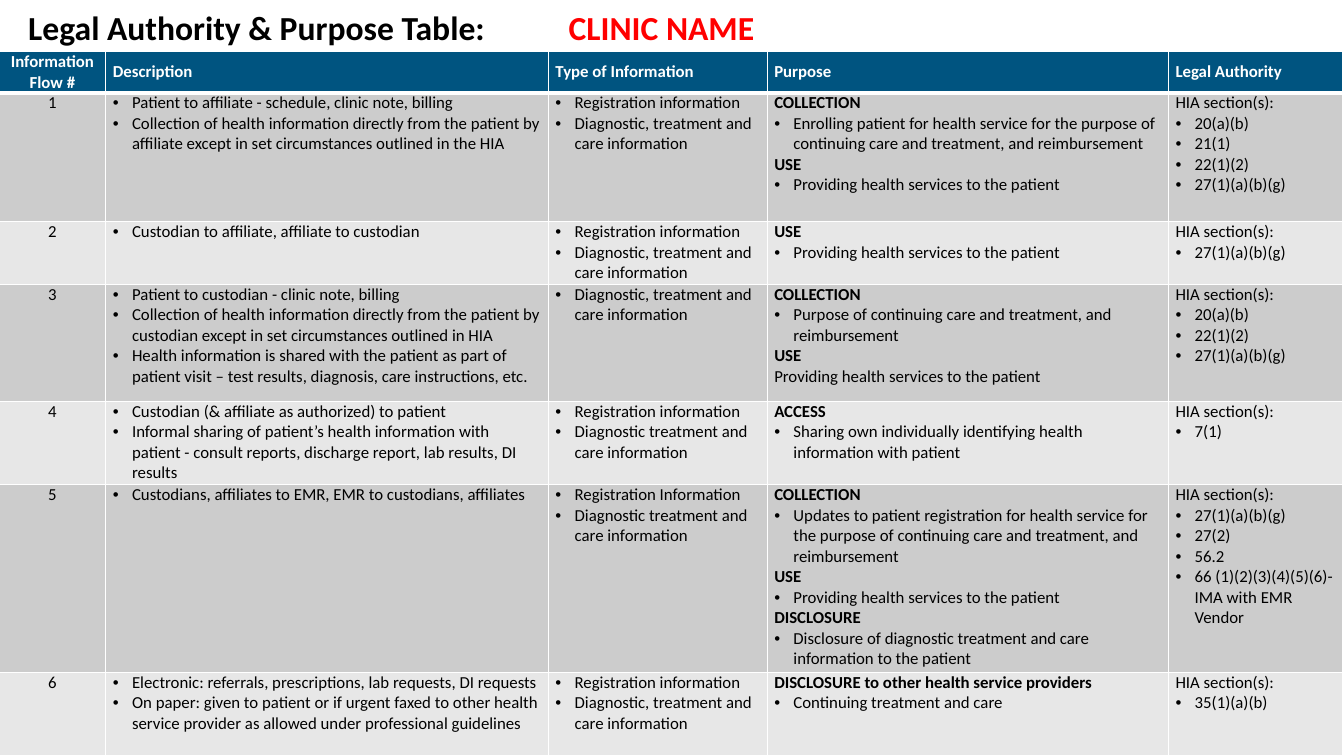
from lxml.etree import SubElement
from pptx import Presentation
from pptx.dml.color import RGBColor
from pptx.enum.text import MSO_ANCHOR, MSO_AUTO_SIZE, PP_ALIGN
from pptx.oxml import parse_xml
from pptx.oxml.ns import nsdecls, qn
from pptx.util import Inches, Pt

BLACK = RGBColor(0x00, 0x00, 0x00)
WHITE = RGBColor(0xFF, 0xFF, 0xFF)
RED = RGBColor(0xFF, 0x00, 0x00)
BLUE = RGBColor(0x00, 0x54, 0x80)
DARK_GREY = RGBColor(0xCC, 0xCC, 0xCC)
LIGHT_GREY = RGBColor(0xE7, 0xE7, 0xE7)

BULLET = "• "
HEADING = "# "
COLUMN_WIDTHS = [1.06, 4.39, 2.17, 3.98, 1.73]
ROW_HEIGHTS = [0.41, 1.28, 0.62, 1.16, 0.83, 1.86, 0.83]
CELL_FORMAT = {
    "margin_left": Inches(0.07),
    "margin_right": Inches(0.07),
    "margin_top": 0,
    "margin_bottom": 0,
}

HEADERS = ["Information Flow #", "Description", "Type of Information", "Purpose", "Legal Authority"]
REGISTRATION = "• Registration information"
DIAGNOSTIC = "• Diagnostic, treatment and care information"
DIAGNOSTIC_TREATMENT = "• Diagnostic treatment and care information"
PROVIDING = "• Providing health services to the patient"
SECTIONS = "HIA section(s):"
FLOWS = [
    (
        ["• Patient to affiliate - schedule, clinic note, billing",
         "• Collection of health information directly from the patient by affiliate "
         "except in set circumstances outlined in the HIA"],
        [REGISTRATION, DIAGNOSTIC],
        ["# COLLECTION",
         "• Enrolling patient for health service for the purpose of continuing care "
         "and treatment, and reimbursement",
         "# USE", PROVIDING],
        [SECTIONS, "• 20(a)(b)", "• 21(1)", "• 22(1)(2)", "• 27(1)(a)(b)(g)"],
    ),
    (
        ["• Custodian to affiliate, affiliate to custodian"],
        [REGISTRATION, DIAGNOSTIC],
        ["# USE", PROVIDING],
        [SECTIONS, "• 27(1)(a)(b)(g)"],
    ),
    (
        ["• Patient to custodian - clinic note, billing",
         "• Collection of health information directly from the patient by custodian "
         "except in set circumstances outlined in HIA",
         "• Health information is shared with the patient as part of patient visit – "
         "test results, diagnosis, care instructions, etc."],
        [DIAGNOSTIC],
        ["# COLLECTION",
         "• Purpose of continuing care and treatment, and reimbursement",
         "# USE", PROVIDING.removeprefix(BULLET)],
        [SECTIONS, "• 20(a)(b)", "• 22(1)(2)", "• 27(1)(a)(b)(g)"],
    ),
    (
        ["• Custodian (& affiliate as authorized) to patient",
         "• Informal sharing of patient’s health information with patient - consult "
         "reports, discharge report, lab results, DI results"],
        [REGISTRATION, DIAGNOSTIC_TREATMENT],
        ["# ACCESS",
         "• Sharing own individually identifying health information with patient"],
        [SECTIONS, "• 7(1)"],
    ),
    (
        ["• Custodians, affiliates to EMR, EMR to custodians, affiliates"],
        ["• Registration Information", DIAGNOSTIC_TREATMENT],
        ["# COLLECTION",
         "• Updates to patient registration for health service for the purpose of "
         "continuing care and treatment, and reimbursement",
         "# USE", PROVIDING,
         "# DISCLOSURE",
         "• Disclosure of diagnostic treatment and care information to the patient"],
        [SECTIONS, "• 27(1)(a)(b)(g)", "• 27(2)", "• 56.2",
         "• 66 (1)(2)(3)(4)(5)(6)- IMA with EMR Vendor"],
    ),
    (
        ["• Electronic: referrals, prescriptions, lab requests, DI requests",
         "• On paper: given to patient or if urgent faxed to other health service "
         "provider as allowed under professional guidelines"],
        [REGISTRATION, DIAGNOSTIC],
        ["# DISCLOSURE to other health service providers", "• Continuing treatment and care"],
        [SECTIONS, "• 35(1)(a)(b)"],
    ),
]


def apply_format(target, values):
    """Set each attribute named in values on target."""
    for name, value in values.items():
        setattr(target, name, value)


def add_run(paragraph, text, size, color, bold):
    """Add a formatted run to a paragraph."""
    run = paragraph.add_run()
    run.text = text
    apply_format(run.font, {"name": "Calibri", "size": Pt(size), "bold": bold})
    run.font.color.rgb = color


def add_bullet(paragraph):
    """Give a paragraph a hanging bullet."""
    properties = paragraph._p.get_or_add_pPr()
    properties.set("marL", str(Inches(0.19)))
    properties.set("indent", str(-Inches(0.19)))
    SubElement(properties, qn("a:buFont"), typeface="Arial")
    SubElement(properties, qn("a:buChar"), char=BULLET.strip())


def set_borders(cell, top, bottom):
    """Draw white borders, with top and bottom widths in points."""
    widths = {"L": 1, "R": 1, "T": top, "B": bottom}
    for index, (side, width) in enumerate(widths.items()):
        border = parse_xml(
            f'<a:ln{side} {nsdecls("a")} w="{Pt(width)}"><a:solidFill>'
            f'<a:srgbClr val="{WHITE}"/></a:solidFill></a:ln{side}>'
        )
        cell._tc.get_or_add_tcPr().insert(index, border)


def fill_cell(cell, lines, fill, color, header=False, centred=False):
    """Write lines into a cell, reading bullet and heading marks."""
    apply_format(cell, CELL_FORMAT)
    cell.vertical_anchor = MSO_ANCHOR.MIDDLE if header else MSO_ANCHOR.TOP
    cell.fill.solid()
    cell.fill.fore_color.rgb = fill
    frame = cell.text_frame
    for index, line in enumerate(lines):
        paragraph = frame.add_paragraph() if index else frame.paragraphs[0]
        paragraph.alignment = PP_ALIGN.CENTER if centred else PP_ALIGN.LEFT
        if line.startswith(BULLET):
            add_bullet(paragraph)
        text = line.removeprefix(BULLET).removeprefix(HEADING)
        add_run(paragraph, text, 12, color, header or line.startswith(HEADING))


def add_title(slide, left, top, width, height):
    """Place the title with the clinic name at a tab stop."""
    title = slide.shapes.title
    apply_format(title, {"left": left, "top": top, "width": width, "height": height})
    apply_format(title.text_frame, {
        "vertical_anchor": MSO_ANCHOR.MIDDLE,
        "auto_size": MSO_AUTO_SIZE.NONE,
        "word_wrap": True,
    })
    paragraph = title.text_frame.paragraphs[0]
    apply_format(paragraph, {"alignment": PP_ALIGN.LEFT, "line_spacing": 0.9})
    tabs = SubElement(paragraph._p.get_or_add_pPr(), qn("a:tabLst"))
    SubElement(tabs, qn("a:tab"), pos=str(Inches(5.36)), algn="l")
    add_run(paragraph, "Legal Authority & Purpose Table:\t", 24, BLACK, True)
    add_run(paragraph, "CLINIC NAME", 24, RED, True)


def add_authority_table(slide, left, top, width, height):
    """Place the table of information flows."""
    table = slide.shapes.add_table(
        len(ROW_HEIGHTS), len(COLUMN_WIDTHS), left, top, width, height
    ).table
    for column, column_width in zip(table.columns, COLUMN_WIDTHS):
        column.width = Inches(column_width)
    for row, row_height in zip(table.rows, ROW_HEIGHTS):
        row.height = Inches(row_height)
    for column, header in enumerate(HEADERS):
        cell = table.cell(0, column)
        fill_cell(cell, [header], BLUE, WHITE, header=True, centred=column == 0)
        set_borders(cell, 1, 3)
    for number, flow in enumerate(FLOWS, start=1):
        fill = DARK_GREY if number % 2 else LIGHT_GREY
        for column, lines in enumerate([[str(number)], *flow]):
            cell = table.cell(number, column)
            fill_cell(cell, lines, fill, BLACK, centred=column == 0)
            set_borders(cell, 3 if number == 1 else 1, 1)


def main():
    """Build and save the presentation."""
    presentation = Presentation()
    apply_format(presentation, {"slide_width": Inches(13.33), "slide_height": Inches(7.5)})
    slide = presentation.slides.add_slide(presentation.slide_layouts[5])
    add_authority_table(slide, Inches(-0.01), Inches(0.51), Inches(13.34), Inches(6.99))
    add_title(slide, Inches(0.18), Inches(-0.07), Inches(11.5), Inches(0.73))
    presentation.save("out.pptx")


if __name__ == "__main__":
    main()
